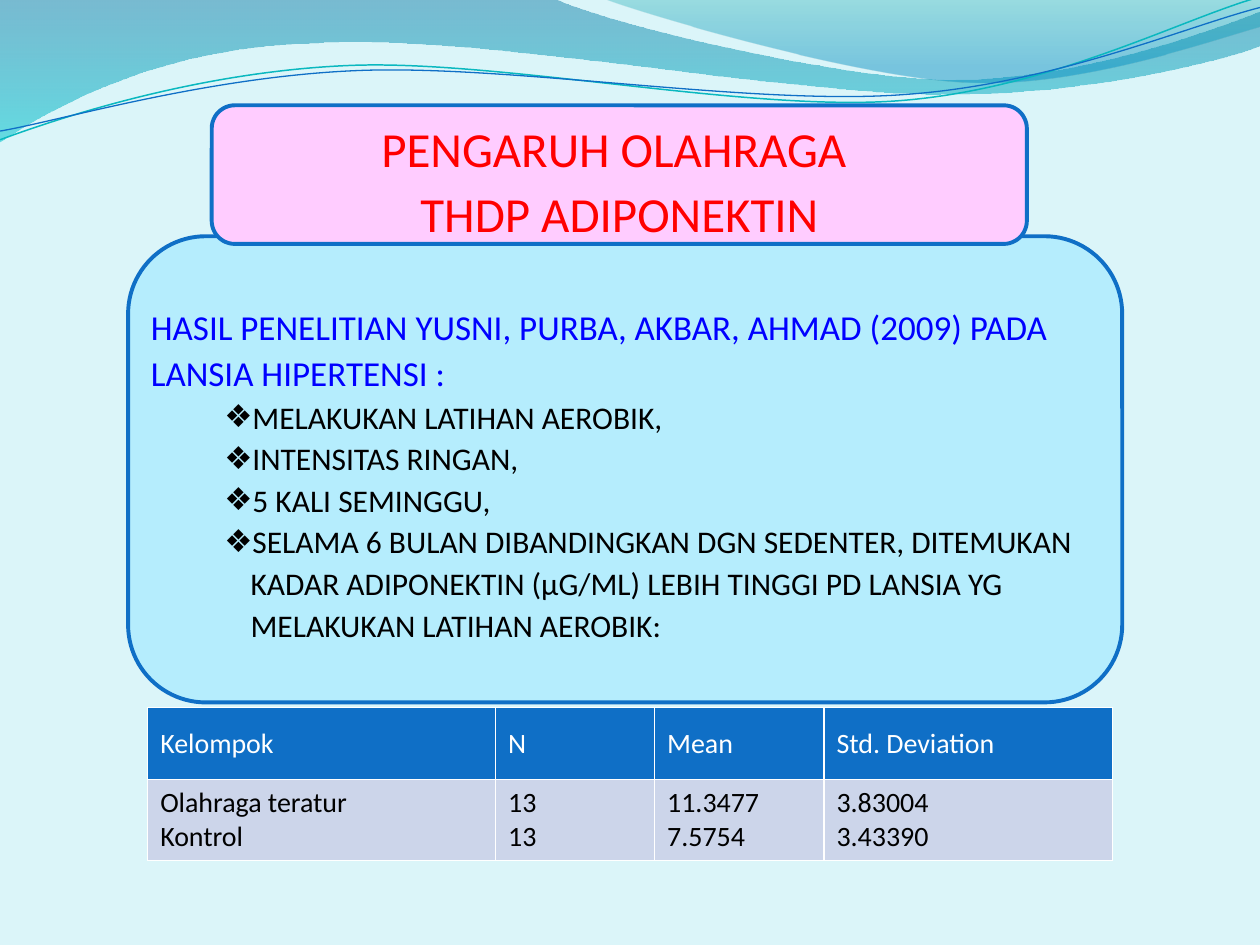
"""Builds the slide on exercise and adiponectin with its result table."""
from dataclasses import dataclass

from lxml import etree
from pptx import Presentation
from pptx.dml.color import RGBColor
from pptx.enum.shapes import MSO_SHAPE
from pptx.enum.text import MSO_ANCHOR, MSO_AUTO_SIZE, PP_ALIGN
from pptx.oxml import parse_xml
from pptx.oxml.ns import nsdecls, qn
from pptx.util import Pt

ROUNDED = MSO_SHAPE.ROUNDED_RECTANGLE
MIDDLE = MSO_ANCHOR.MIDDLE
NO_AUTOFIT = MSO_AUTO_SIZE.NONE
LEFT, CENTER = PP_ALIGN.LEFT, PP_ALIGN.CENTER


@dataclass(frozen=True)
class Theme:
    """Colours, font and type sizes of the slide."""
    font: str = "Calibri"
    background: str = "DBF5F9"
    accent: str = "0F6FC6"
    teal: str = "0AB8BF"
    title_fill: str = "FFCCFF"
    title_text: str = "FF0000"
    body_fill: str = "B5EDFD"
    heading_text: str = "0000FF"
    text: str = "000000"
    white: str = "FFFFFF"
    row_fill: str = "CCD5EA"
    wide_wave: tuple = ((0, "0074A1", 45), (1, "00C6CF", 55))
    right_wave: tuple = ((0, "00A1A9", 30), (0.8, "008BBF", 45))
    title_size: int = 28
    heading_size: int = 20
    list_size: int = 18
    table_size: int = 16


THEME = Theme()

WIDE_WAVE = [
    (-0.7, 0), (316.8, -0.7), (342.7, 12.2, 478.1, 45.4, 545.8, 45.4),
    (614.2, 45.4, 689.8, 18.7, 720, 6.5), (720.7, 25.9),
    (707.8, 31.7, 626.4, 54.7, 537.1, 54), (447.8, 54, 275, 20.2, 185, 24.5),
    (92.9, 25.9, 33.1, 59.8, -0.7, 81.4)]
RIGHT_WAVE = [
    (344.9, -0.7), (366.5, 7.9, 491, 44.6, 553.7, 46.8),
    (616.3, 49.7, 691.9, 23, 720, 15.1), (720, 0)]
TEAL_LINE = [
    (-1.4, 62.9), (33.8, 51.7, 114.1, 29.4, 199.8, 29.9),
    (284.9, 30.3, 425.8, 67.3, 512.4, 64.8), (599, 62.4, 676.5, 25.7, 720.2, 15.6)]
BLUE_LINE = [
    (-1.1, 57.9), (32.9, 53.8, 118.3, 32.5, 204.1, 33),
    (290.6, 33.4, 428.9, 63.8, 515.5, 61.4), (601.3, 59.6, 678.5, 30.1, 721.4, 21.3)]
LINE_ROTATION = -2.7

BODY_BOX = (73.2, 135, 568.1, 266.4)
TITLE_BOX = (121, 60.2, 465.8, 79.2)

TITLE = ["PENGARUH OLAHRAGA ", "THDP ADIPONEKTIN"]
HEADING = "HASIL PENELITIAN YUSNI, PURBA, AKBAR, AHMAD (2009) PADA LANSIA HIPERTENSI :"
ITEMS = [
    "MELAKUKAN LATIHAN AEROBIK,",
    "INTENSITAS RINGAN,",
    "5 KALI SEMINGGU,",
    "SELAMA 6 BULAN DIBANDINGKAN DGN SEDENTER, DITEMUKAN KADAR ADIPONEKTIN "
    "(μG/ML) LEBIH TINGGI PD LANSIA YG MELAKUKAN LATIHAN AEROBIK:"]
RESULTS = [
    ["Kelompok", "N", "Mean", "Std. Deviation"],
    ["Olahraga teratur\nKontrol", "13\n13", "11.3477\n7.5754", "3.83004\n3.43390"]]


def write_text(frame, lines, *, size, color, align=LEFT, spacing=1.0, bullet=None):
    """Add each line as a formatted paragraph, filling an empty first one."""
    for line in lines:
        paragraph = frame.paragraphs[0]
        if paragraph.runs:
            paragraph = frame.add_paragraph()
        paragraph.alignment = align
        paragraph.line_spacing = spacing
        paragraph.space_before = paragraph.space_after = Pt(0)
        properties = paragraph._p.get_or_add_pPr()
        properties.set("marL", str(Pt(57 if bullet else 0)))
        properties.set("indent", str(Pt(-15 if bullet else 0)))
        if bullet:
            etree.SubElement(properties, qn("a:buChar")).set("char", bullet)
        else:
            etree.SubElement(properties, qn("a:buNone"))
        run = paragraph.add_run()
        run.text = line
        run.font.name = THEME.font
        run.font.size = Pt(size)
        run.font.bold = False
        run.font.color.rgb = RGBColor.from_string(color)


class SlideBuilder:
    """Holds the theme and the current slide."""

    def __init__(self, slide, theme):
        self.slide = slide
        self.theme = theme
        slide.background.fill.solid()
        slide.background.fill.fore_color.rgb = RGBColor.from_string(theme.background)

    def outline(self, segments, closed):
        """Draw a freeform whose six-number segments are cubic curves."""
        ends = [(Pt(segment[-2]), Pt(segment[-1])) for segment in segments]
        builder = self.slide.shapes.build_freeform(*ends[0])
        builder.add_line_segments(ends[1:], close=closed)
        shape = builder.convert_to_shape()
        shape.shadow.inherit = False
        edges = list(shape._element.iter(qn("a:lnTo")))
        for edge, segment in zip(edges, segments[1:]):
            if len(segment) == 6:
                edge.tag = qn("a:cubicBezTo")
                edge.clear()
                for x, y in zip(segment[::2], segment[1::2]):
                    point = etree.SubElement(edge, qn("a:pt"))
                    point.set("x", str(Pt(x) - shape.left))
                    point.set("y", str(Pt(y) - shape.top))
        return shape

    def wave(self, segments, stops):
        """Draw a filled wave with a translucent downward gradient."""
        shape = self.outline(segments, True)
        shape.line.fill.background()
        shape.fill.gradient()
        shape.fill.gradient_angle = 270
        for stop, (position, color, opacity) in zip(shape.fill.gradient_stops, stops):
            stop.position = position
            stop.color.rgb = RGBColor.from_string(color)
            color_element = stop._gs.find(qn("a:srgbClr"))
            etree.SubElement(color_element, qn("a:alpha")).set("val", str(opacity * 1000))

    def wave_line(self, segments, color, width):
        """Draw an open, slightly turned curved line."""
        shape = self.outline(segments, False)
        shape.rotation = LINE_ROTATION
        shape.fill.background()
        shape.line.color.rgb = RGBColor.from_string(color)
        shape.line.width = Pt(width)

    def paint(self, shape, fill):
        """Give a panel its fill and border."""
        shape.fill.solid()
        shape.fill.fore_color.rgb = RGBColor.from_string(fill)
        shape.line.color.rgb = RGBColor.from_string(self.theme.accent)
        shape.line.width = Pt(2.25)

    def panel(self, box, fill):
        """Add a rounded rectangle."""
        shape = self.slide.shapes.add_shape(ROUNDED, *map(Pt, box))
        shape.shadow.inherit = False
        self.paint(shape, fill)

    def placeholder(self, placeholder, box):
        """Move a placeholder to the front and return its prepared text frame."""
        placeholder.left, placeholder.top, placeholder.width, placeholder.height = map(Pt, box)
        self.slide.shapes._spTree.append(placeholder._element)
        frame = placeholder.text_frame
        frame.margin_left = frame.margin_right = frame.margin_bottom = Pt(0)
        frame.margin_top = Pt(3.6)
        frame.word_wrap = True
        frame.auto_size = NO_AUTOFIT
        frame.vertical_anchor = MIDDLE
        return frame

    def rounded_placeholder(self, placeholder, box, fill):
        """Turn a placeholder into a rounded panel and return its text frame."""
        frame = self.placeholder(placeholder, box)
        placeholder._element.spPr.find(qn("a:xfrm")).addnext(parse_xml(
            f'<a:prstGeom {nsdecls("a")} prst="roundRect"><a:avLst/></a:prstGeom>'))
        self.paint(placeholder, fill)
        return frame

    def table(self, rows, left, top, widths, heights):
        """Add a table with a coloured header row and thin white borders."""
        frame = self.slide.shapes.add_table(
            len(rows), len(widths), Pt(left), Pt(top), Pt(sum(widths)), Pt(sum(heights)))
        for column, width in zip(frame.table.columns, widths):
            column.width = Pt(width)
        for index, (row, height, texts) in enumerate(zip(frame.table.rows, heights, rows)):
            row.height = Pt(height)
            fill, color = ((self.theme.row_fill, self.theme.text) if index
                           else (self.theme.accent, self.theme.white))
            for cell, text in zip(row.cells, texts):
                cell.vertical_anchor = MIDDLE
                write_text(cell.text_frame, text.split("\n"),
                           size=self.theme.table_size, color=color)
                properties = cell._tc.get_or_add_tcPr()
                for side in ("lnL", "lnR", "lnT", "lnB"):
                    properties.append(parse_xml(
                        f'<a:{side} {nsdecls("a")} w="{Pt(1)}"><a:solidFill>'
                        f'<a:srgbClr val="{self.theme.white}"/></a:solidFill></a:{side}>'))
                cell.fill.solid()
                cell.fill.fore_color.rgb = RGBColor.from_string(fill)


def main():
    """Build and save the presentation."""
    presentation = Presentation()
    presentation.slide_width, presentation.slide_height = Pt(720), Pt(540)
    slide = presentation.slides.add_slide(presentation.slide_layouts[1])
    builder = SlideBuilder(slide, THEME)
    builder.wave(WIDE_WAVE, THEME.wide_wave)
    builder.wave(RIGHT_WAVE, THEME.right_wave)
    builder.wave_line(TEAL_LINE, THEME.teal, 0.85)
    builder.wave_line(BLUE_LINE, THEME.accent, 0.75)
    frame = builder.rounded_placeholder(slide.placeholders[1], BODY_BOX, THEME.body_fill)
    write_text(frame, [HEADING], size=THEME.heading_size, color=THEME.heading_text, spacing=1.1)
    write_text(frame, ITEMS, size=THEME.list_size, color=THEME.text, spacing=1.1, bullet="❖")
    builder.table(RESULTS, 84.4, 404.2, (198.8, 90.9, 96.8, 164.9), (41.3, 46))
    builder.panel(TITLE_BOX, THEME.title_fill)
    frame = builder.placeholder(slide.shapes.title, TITLE_BOX)
    write_text(frame, TITLE, size=THEME.title_size, color=THEME.title_text,
               align=CENTER, spacing=1.1)
    presentation.save("out.pptx")


if __name__ == "__main__":
    main()
